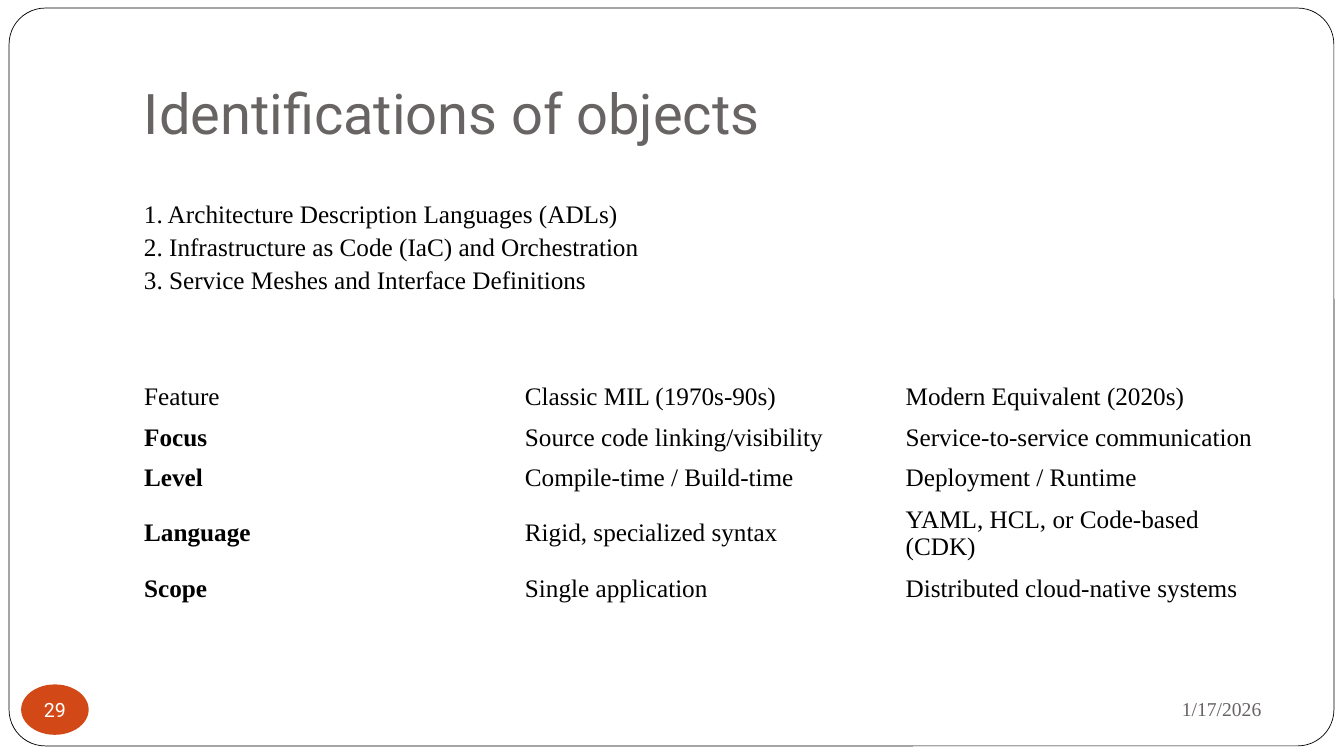
from pptx import Presentation
from pptx.dml.color import RGBColor
from pptx.enum.shapes import MSO_SHAPE as Shape
from pptx.enum.text import MSO_ANCHOR as Anchor, PP_ALIGN as Align
from pptx.util import Inches, Pt

WHITE = RGBColor(0xFF, 0xFF, 0xFF)
BLACK = RGBColor(0, 0, 0)
GREY = RGBColor(0x69, 0x64, 0x64)
ORANGE = RGBColor(0xD3, 0x48, 0x17)
SANS, SERIF = "Roboto", "Times New Roman"

TOPICS = [
    "1. Architecture Description Languages (ADLs)",
    "2. Infrastructure as Code (IaC) and Orchestration",
    "3. Service Meshes and Interface Definitions",
]
ROWS = [
    ("Feature", "Classic MIL (1970s-90s)", "Modern Equivalent (2020s)"),
    ("Focus", "Source code linking/visibility", "Service-to-service communication"),
    ("Level", "Compile-time / Build-time", "Deployment / Runtime"),
    ("Language", "Rigid, specialized syntax", "YAML, HCL, or Code-based (CDK)"),
    ("Scope", "Single application", "Distributed cloud-native systems"),
]


def write(frame, lines, size, font, color, bold=False, align=Align.LEFT, gap=1.0):
    """Fill a text frame with one paragraph per line."""
    for i, line in enumerate(lines):
        para = frame.add_paragraph() if i else frame.paragraphs[0]
        para.alignment = align
        para.line_spacing = gap
        run = para.add_run()
        run.text = line
        run.font.size = Pt(size)
        run.font.name = font
        run.font.bold = bold
        run.font.color.rgb = color


def add_text(slide, box, lines, size, font, color, anchor=Anchor.TOP, **style):
    frame = slide.shapes.add_textbox(*map(Inches, box)).text_frame
    frame.word_wrap = True
    frame.vertical_anchor = anchor
    write(frame, lines, size, font, color, **style)
    return frame


def add_shape(slide, kind, box, fill):
    shape = slide.shapes.add_shape(kind, *map(Inches, box))
    shape.shadow.inherit = False
    shape.fill.solid()
    shape.fill.fore_color.rgb = fill
    return shape


def add_frame(slide, box):
    """Draw the rounded border around the slide."""
    frame = add_shape(slide, Shape.ROUNDED_RECTANGLE, box, WHITE)
    frame.adjustments[0] = 0.049
    frame.line.color.rgb = BLACK
    frame.line.width = Pt(0.5)


def add_title(slide, box, title):
    frame = add_text(slide, box, [title], 40, SANS, GREY, Anchor.BOTTOM)
    frame.margin_bottom = Inches(0.1)


def add_badge(slide, box, number):
    """Draw the slide number in its oval."""
    badge = add_shape(slide, Shape.OVAL, box, ORANGE)
    badge.line.fill.background()
    frame = badge.text_frame
    frame.margin_left = frame.margin_right = 0
    frame.margin_top = frame.margin_bottom = 0
    frame.word_wrap = False
    frame.vertical_anchor = Anchor.MIDDLE
    write(frame, [number], 14, SANS, WHITE, align=Align.CENTER)


def add_grid(slide, box, rows):
    """Place the comparison table; rows grow to fit their text."""
    left, top, width, height = map(Inches, box)
    count = len(rows[0])
    table = slide.shapes.add_table(len(rows), count, left, top, width, height).table
    table.first_row = table.horz_banding = False
    for col in table.columns:
        col.width = width // count
    for r, row in enumerate(rows):
        table.rows[r].height = Inches(0.37)
        for c, text in enumerate(row):
            cell = table.cell(r, c)
            cell.fill.background()
            cell.vertical_anchor = Anchor.MIDDLE
            write(cell.text_frame, [text], 18, SERIF, BLACK, bold=r > 0 and c == 0)


def main():
    deck = Presentation()
    deck.slide_width, deck.slide_height = Inches(13.33), Inches(7.5)
    slide = deck.slides.add_slide(deck.slide_layouts[6])
    add_frame(slide, (0.09, 0.08, 13.14, 7.32))
    add_title(slide, (1.33, 0.3, 11.33, 1.25), "Identifications of objects")
    add_text(slide, (9, 6.77, 3.61, 0.52), ["1/17/2026"], 14, SERIF, GREY,
             Anchor.MIDDLE, align=Align.RIGHT)
    add_badge(slide, (0.21, 6.79, 0.67, 0.5), "29")
    add_grid(slide, (1.33, 3.74, 11.33, 2), ROWS)
    add_text(slide, (1.33, 1.89, 6.67, 1.01), TOPICS, 18, SERIF, BLACK, gap=1.09)
    deck.save("out.pptx")


if __name__ == "__main__":
    main()
